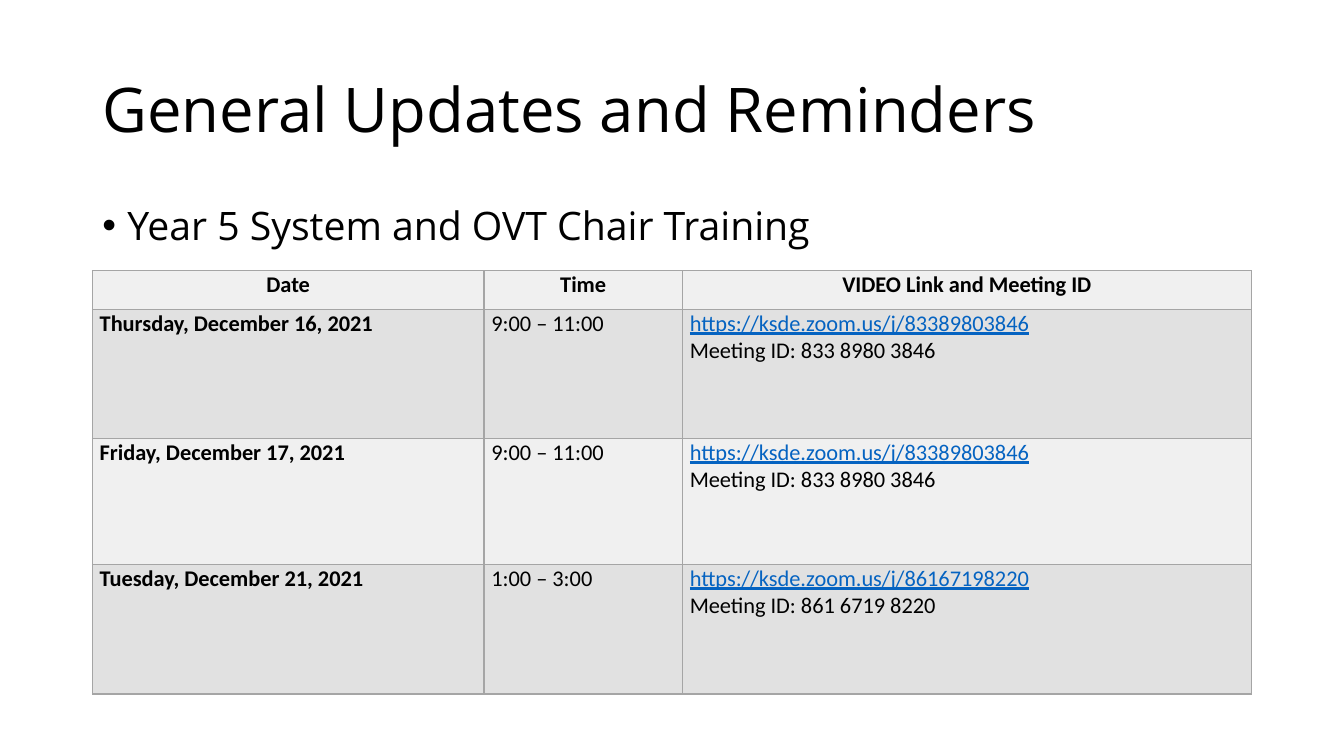
from dataclasses import dataclass

from lxml import etree
from pptx import Presentation
from pptx.dml.color import RGBColor
from pptx.enum.text import MSO_ANCHOR, MSO_AUTO_SIZE, PP_ALIGN
from pptx.oxml.ns import qn
from pptx.util import Pt

MIDDLE, TOP = MSO_ANCHOR.MIDDLE, MSO_ANCHOR.TOP
LEFT, CENTER = PP_ALIGN.LEFT, PP_ALIGN.CENTER
NO_FIT = MSO_AUTO_SIZE.NONE
EMU_PER_PX = 9525
TITLE_ONLY = 5


@dataclass(frozen=True)
class Theme:
    heading_font: str = "Open Sans"
    table_font: str = "Calibri"
    title_size: int = 44
    bullet_size: int = 28
    table_size: int = 16
    ink: str = "000000"
    link: str = "0563C1"
    border: str = "A5A5A5"
    bands: tuple = ("F0F0F0", "E1E1E1")


THEME = Theme()
HEADINGS = ("Date", "Time", "VIDEO Link and Meeting ID")
SESSIONS = (
    ("Thursday, December 16, 2021", "9:00 – 11:00",
     "https://ksde.zoom.us/j/83389803846\nMeeting ID: 833 8980 3846"),
    ("Friday, December 17, 2021", "9:00 – 11:00",
     "https://ksde.zoom.us/j/83389803846\nMeeting ID: 833 8980 3846"),
    ("Tuesday, December 21, 2021", "1:00 – 3:00",
     "https://ksde.zoom.us/j/86167198220\nMeeting ID: 861 6719 8220"),
)
COLUMN_WIDTHS = (373, 189, 542)
ROW_HEIGHTS = (37, 123, 120, 123)


def px(length):
    return length * EMU_PER_PX


def style(paragraph, font_name, size, color=THEME.ink, bold=False, underline=False):
    for run in paragraph.runs:
        font = run.font
        font.name, font.size = font_name, Pt(size)
        font.bold, font.underline = bold, underline
        font.color.rgb = RGBColor.from_string(color)


def add_title(slide, box, wording):
    title = slide.shapes.title
    title.left, title.top, title.width, title.height = map(px, box)
    frame = title.text_frame
    frame.text = wording
    frame.word_wrap = True
    frame.auto_size = NO_FIT
    frame.vertical_anchor = MIDDLE
    heading = frame.paragraphs[0]
    heading.alignment = LEFT
    heading.line_spacing = 0.9
    style(heading, THEME.heading_font, THEME.title_size)


def add_topic(slide, box, wording):
    frame = slide.shapes.add_textbox(*map(px, box)).text_frame
    frame.word_wrap = True
    frame.vertical_anchor = TOP
    frame.text = wording
    topic = frame.paragraphs[0]
    topic.line_spacing = 0.9
    properties = topic._p.get_or_add_pPr()
    properties.set("marL", str(px(24)))
    properties.set("indent", str(px(-24)))
    etree.SubElement(properties, qn("a:buFont")).set("typeface", "Arial")
    etree.SubElement(properties, qn("a:buChar")).set("char", "•")
    style(topic, THEME.heading_font, THEME.bullet_size)


def add_borders(cell):
    properties = cell._tc.get_or_add_tcPr()
    for side in ("a:lnL", "a:lnR", "a:lnT", "a:lnB"):
        line = etree.SubElement(properties, qn(side), w=str(Pt(1)))
        fill = etree.SubElement(line, qn("a:solidFill"))
        etree.SubElement(fill, qn("a:srgbClr"), val=THEME.border)


def fill_cell(cell, wording, row, column):
    add_borders(cell)
    cell.fill.solid()
    cell.fill.fore_color.rgb = RGBColor.from_string(THEME.bands[row % 2])
    cell.margin_left = cell.margin_right = px(7)
    cell.margin_top = cell.margin_bottom = 0
    cell.vertical_anchor = TOP
    cell.text_frame.text = wording
    for entry in cell.text_frame.paragraphs:
        is_link = entry.text.startswith("https://")
        entry.alignment = CENTER if row == 0 else LEFT
        style(entry, THEME.table_font, THEME.table_size,
              color=THEME.link if is_link else THEME.ink,
              bold=row == 0 or column == 0, underline=is_link)


def add_schedule(slide, box):
    rows = (HEADINGS, *SESSIONS)
    schedule = slide.shapes.add_table(len(rows), len(HEADINGS), *map(px, box)).table
    schedule.first_row = schedule.horz_banding = False
    for column, width in zip(schedule.columns, COLUMN_WIDTHS):
        column.width = px(width)
    for row, height in zip(schedule.rows, ROW_HEIGHTS):
        row.height = px(height)
    for row, entries in enumerate(rows):
        for column, wording in enumerate(entries):
            fill_cell(schedule.cell(row, column), wording, row, column)


def main():
    deck = Presentation()
    deck.slide_width, deck.slide_height = px(1280), px(720)
    slide = deck.slides.add_slide(deck.slide_layouts[TITLE_ONLY])
    left, width = 88, sum(COLUMN_WIDTHS)
    add_title(slide, (left, 38, width, 139), "General Updates and Reminders")
    add_topic(slide, (left, 192, width, 457), "Year 5 System and OVT Chair Training")
    add_schedule(slide, (left, 258, width, sum(ROW_HEIGHTS)))
    deck.save("out.pptx")


if __name__ == "__main__":
    main()
